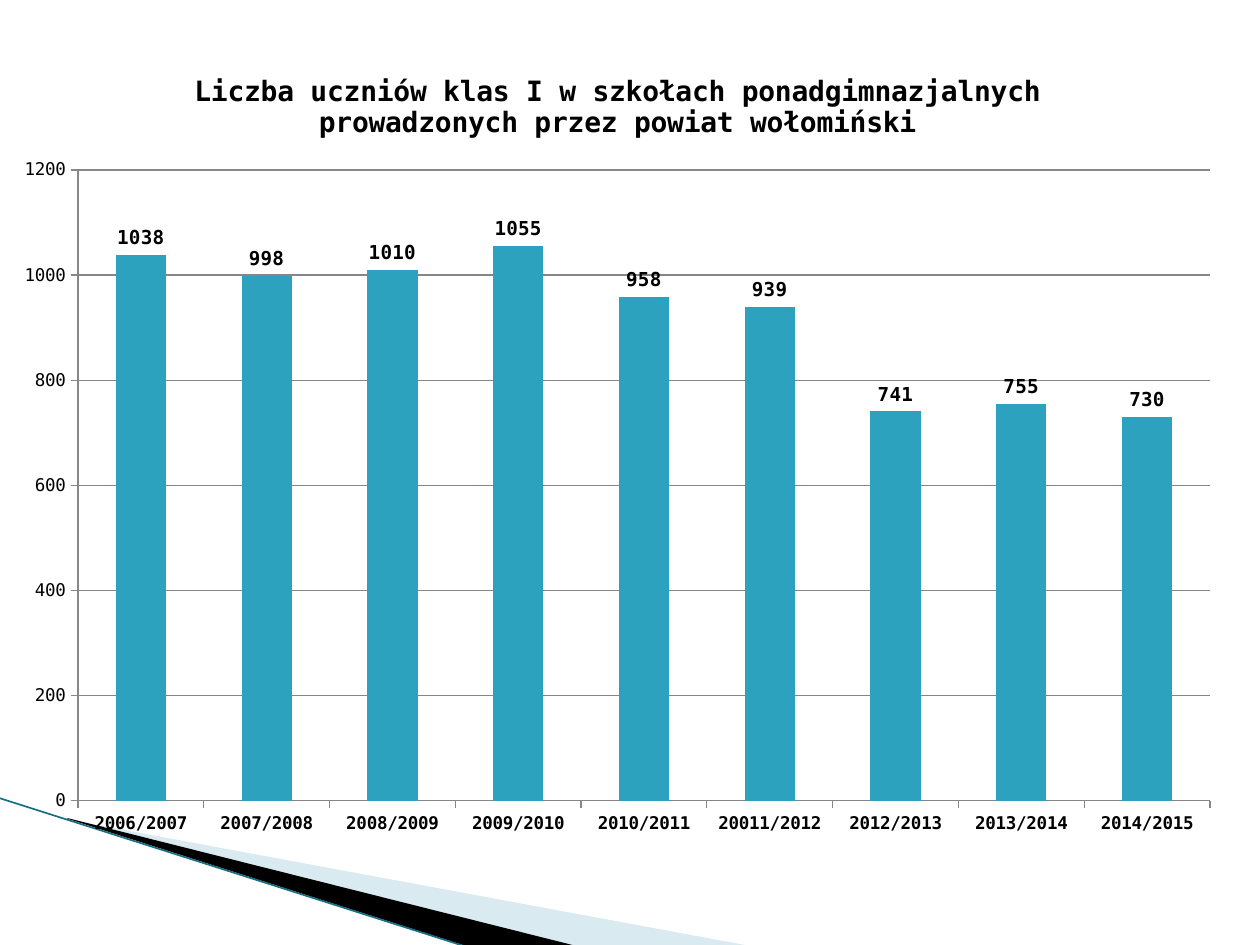
from lxml import etree
from pptx import Presentation
from pptx.chart.data import CategoryChartData
from pptx.dml.color import RGBColor
from pptx.enum.chart import XL_CHART_TYPE as ChartType, XL_LABEL_POSITION as LabelPos
from pptx.enum.chart import XL_TICK_MARK as Tick
from pptx.enum.shapes import MSO_CONNECTOR as Connector
from pptx.oxml import parse_xml
from pptx.oxml.ns import nsdecls, qn
from pptx.util import Emu, Pt

PX = 914400 / 126
FONT = "DejaVu Sans Mono"
TITLE = ("Liczba uczniów klas I w szkołach ponadgimnazjalnych "
         "prowadzonych przez powiat wołomiński")
PUPILS = {"2006/2007": 1038, "2007/2008": 998, "2008/2009": 1010,
          "2009/2010": 1055, "2010/2011": 958, "20011/2012": 939,
          "2012/2013": 741, "2013/2014": 755, "2014/2015": 730}


def px(n):
    """Turn px into EMU."""
    return Emu(round(n * PX))


def rgb(color):
    """Turn a hex string into a colour."""
    return RGBColor.from_string(color)


def style(font, **values):
    """Set the typeface, black colour and given values of a font."""
    for name, value in {"name": FONT, **values}.items():
        setattr(font, name, value)
    font.color.rgb = rgb("000000")


def rule(line, color, width):
    """Set the colour and width of a line."""
    line.color.rgb = rgb(color)
    line.width = Pt(width)


def add_wedge(s, box, points, color, alpha=100):
    """Draw a filled wedge from points relative to the box."""
    x, y, _, _ = box
    (x0, y0), *rest = [(x + dx, y + dy) for dx, dy in points]
    builder = s.shapes.build_freeform(x0, y0, scale=PX)
    builder.add_line_segments(rest, close=True)
    sp = builder.convert_to_shape()
    sp.shadow.inherit = False
    sp.fill.solid()
    sp.fill.fore_color.rgb = rgb(color)
    sp.line.fill.background()
    if alpha < 100:
        clr = sp._element.spPr.find(qn("a:solidFill"))[0]
        etree.SubElement(clr, qn("a:alpha")).set("val", str(alpha * 1000))


def add_corner(s, box):
    """Draw the slanted decoration in the lower left corner."""
    x, y, w, h = box
    add_wedge(s, box, [(70, 22), (750, 148), (575, 148), (70, 21)], "A0CBDC", 40)
    add_wedge(s, box, [(67, 20), (576, 148), (469, 149), (68, 21)], "000000")
    edge = s.shapes.add_connector(Connector.STRAIGHT, px(x - 1), px(y),
                                  px(x + w), px(y + h))
    rule(edge.line, "176F84", 0.95)
    etree.SubElement(edge._element.spPr, qn("a:effectLst"))


def set_plot_box(chart, box, plot):
    """Fix the inner plot area, given relative to the chart box."""
    _, _, w, h = box
    parts = zip("xywh", plot, (w, h, w, h))
    values = "".join(f'<c:{k} val="{v / size:.4f}"/>' for k, v, size in parts)
    layout = parse_xml(
        f'<c:layout {nsdecls("c")}><c:manualLayout><c:layoutTarget val="inner"/>'
        f'<c:xMode val="edge"/><c:yMode val="edge"/>{values}'
        '</c:manualLayout></c:layout>')
    area = chart._chartSpace.chart.plotArea
    for old in area.findall(qn("c:layout")):
        area.remove(old)
    area.insert(0, layout)


def add_pupil_chart(s, box):
    """Add the column chart of pupils per school year."""
    data = CategoryChartData()
    data.categories = list(PUPILS)
    data.add_series("Series 1", list(PUPILS.values()))
    chart = s.shapes.add_chart(ChartType.COLUMN_CLUSTERED, *map(px, box), data).chart
    style(chart.font, size=Pt(10))
    chart.has_legend = False
    chart.has_title = True
    tf = chart.chart_title.text_frame
    tf.text = TITLE
    style(tf.paragraphs[0].runs[0].font, size=Pt(16), bold=True)
    chart.chart_title.include_in_layout = False

    for axis, bold in ((chart.category_axis, True), (chart.value_axis, False)):
        axis.major_tick_mark = Tick.OUTSIDE
        axis.minor_tick_mark = Tick.NONE
        rule(axis.format.line, "868686", 0.75)
        style(axis.tick_labels.font, size=Pt(10), bold=bold)
    values = chart.value_axis
    values.minimum_scale, values.maximum_scale, values.major_unit = 0, 1200, 200
    values.has_major_gridlines = True
    rule(values.major_gridlines.format.line, "868686", 0.75)

    plot = chart.plots[0]
    plot.gap_width = 150
    plot.vary_by_categories = False
    fill = plot.series[0].format.fill
    fill.solid()
    fill.fore_color.rgb = rgb("2DA2BF")
    plot.has_data_labels = True
    labels = plot.data_labels
    labels.show_value = True
    labels.position = LabelPos.OUTSIDE_END
    style(labels.font, size=Pt(11), bold=True)
    set_plot_box(chart, box, (78, 125, 1132, 631))


def main():
    """Build and save the slide."""
    prs = Presentation()
    prs.slide_width, prs.slide_height = px(1260), px(945)
    s = prs.slides.add_slide(prs.slide_layouts[6])
    add_corner(s, (0, 798, 467, 149))
    add_pupil_chart(s, (0, 45, 1235, 804))
    prs.save("out.pptx")


if __name__ == "__main__":
    main()
